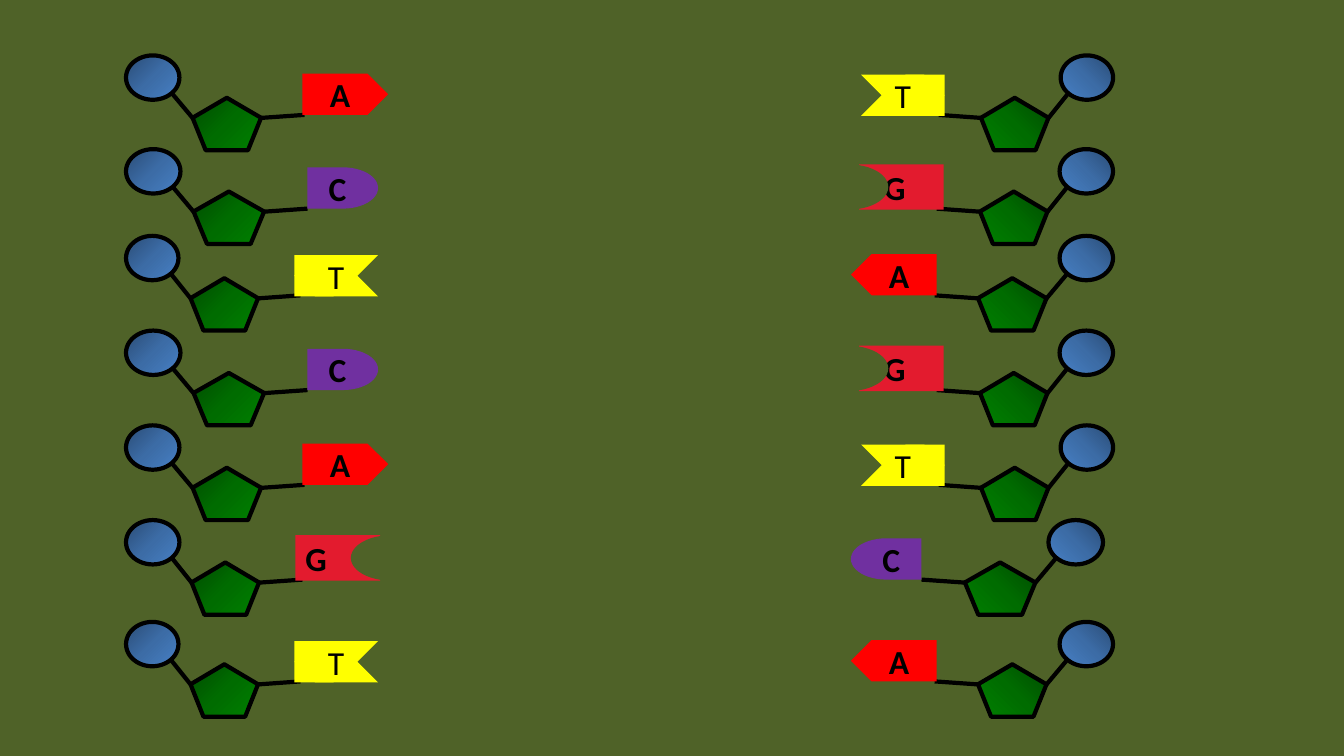
from copy import deepcopy
from dataclasses import dataclass

from lxml.etree import SubElement
from pptx import Presentation
from pptx.dml.color import RGBColor
from pptx.enum.shapes import MSO_CONNECTOR, MSO_SHAPE as Preset
from pptx.enum.text import MSO_ANCHOR, PP_ALIGN
from pptx.oxml.ns import qn
from pptx.util import Inches, Pt

FONT = "Calibri"
BLACK = RGBColor(0x00, 0x00, 0x00)
BACKGROUND = RGBColor(0x4F, 0x62, 0x28)
RED = RGBColor(0xFF, 0x00, 0x00)
YELLOW = RGBColor(0xFF, 0xFF, 0x00)
PURPLE = RGBColor(0x70, 0x30, 0xA0)
CRIMSON = RGBColor(0xE3, 0x1B, 0x2E)
BLUES = (RGBColor(0x2A, 0x4C, 0x75), RGBColor(0x3C, 0x6C, 0xA6), RGBColor(0x47, 0x80, 0xC5))
GREENS = (RGBColor(0x00, 0x4C, 0x00), RGBColor(0x00, 0x6C, 0x00), RGBColor(0x00, 0x80, 0x00))


@dataclass
class Backbone:
    """Widths and distances from the outer edge of a strand, in inches."""
    phosphate_width: float
    sugar_left: float
    sugar_width: float
    bond_end: float


BACKBONES = {
    "A": Backbone(0.53, 0.66, 0.68, 1.77),
    "C": Backbone(0.54, 0.67, 0.70, 1.80),
    "T": Backbone(0.52, 0.64, 0.67, 1.73),
    "G": Backbone(0.53, 0.65, 0.67, 1.75),
}
ROW_TOPS = (0.55, 1.48, 2.34, 3.28, 4.22, 5.16, 6.17)
LEFT_EDGE, RIGHT_EDGE, RIGHT_C_EDGE = 1.25, 11.04, 10.94


class StrandDrawer:
    """Draws one strand; x runs inwards from its outer edge."""

    def __init__(self, slide, mirrored):
        self.shapes = slide.shapes.add_group_shape().shapes
        self.mirrored = mirrored
        self.edge = self.top = 0

    def x(self, distance):
        return Inches(self.edge - distance if self.mirrored else self.edge + distance)

    def shape(self, preset, left, top, width, height, color=None, faces_out=False):
        start = left + width if self.mirrored else left
        shape = self.shapes.add_shape(preset, self.x(start), Inches(self.top + top),
                                      Inches(width), Inches(height))
        shape.shadow.inherit = False
        if self.mirrored != faces_out:
            shape.element.spPr.find(qn("a:xfrm")).set("flipH", "1")
        if color is not None:
            shape.fill.solid()
            shape.fill.fore_color.rgb = color
            shape.line.fill.background()
        return shape

    def shaded_shape(self, preset, left, top, width, height, colors):
        shape = self.shape(preset, left, top, width, height)
        shape.line.color.rgb = BLACK
        shape.line.width = Pt(3)
        shape.fill.gradient()
        shape.fill.gradient_angle = 315
        stop_list = shape.element.spPr.find(qn("a:gradFill")).find(qn("a:gsLst"))
        stop_list.insert(1, deepcopy(stop_list[0]))
        for stop, color, position in zip(shape.fill.gradient_stops, colors, (0, 0.5, 1)):
            stop.color.rgb = color
            stop.position = position

    def bond(self, x1, y1, x2, y2):
        line = self.shapes.add_connector(
            MSO_CONNECTOR.STRAIGHT, self.x(x1), Inches(self.top + y1),
            self.x(x2), Inches(self.top + y2))
        line.line.color.rgb = BLACK
        line.line.width = Pt(3)
        SubElement(line.element.spPr, qn("a:effectLst"))

    def letter(self, shape, text, bold=True, align=PP_ALIGN.CENTER):
        frame = shape.text_frame
        frame.vertical_anchor = MSO_ANCHOR.MIDDLE
        paragraph = frame.paragraphs[0]
        paragraph.text = text
        paragraph.alignment = align
        paragraph.font.name = FONT
        paragraph.font.size = Pt(24)
        paragraph.font.bold = bold
        paragraph.font.color.rgb = BLACK

    def base(self, name):
        if name == "A":
            self.letter(self.shape(Preset.PENTAGON, 1.75, 0.18, 0.85, 0.41, RED), name)
        elif name == "C":
            self.letter(self.shape(Preset.FLOWCHART_DELAY, 1.80, 0.18, 0.70, 0.41, PURPLE), name)
        elif name == "T":
            # The block fills the chevron's point, leaving only its notch
            self.shape(Preset.RECTANGLE, 1.67, 0.19, 0.39, 0.41, YELLOW)
            chevron = self.shape(Preset.CHEVRON, 1.67, 0.19, 0.83, 0.41, YELLOW, faces_out=True)
            self.letter(chevron, name, bold=False)
        else:
            # The block is hollowed by a rounded shape in the background colour
            block = self.shape(Preset.RECTANGLE, 1.68, 0.15, 0.84, 0.45, CRIMSON)
            self.letter(block, name, align=PP_ALIGN.LEFT)
            block.text_frame.margin_left = Inches(0.25 if self.mirrored else 0.1)
            self.shape(Preset.FLOWCHART_DELAY, 2.23, 0.15, 0.79, 0.45, BACKGROUND, faces_out=True)

    def nucleotide(self, name, edge, top):
        self.edge, self.top = edge, top
        part = BACKBONES[name]
        sugar_right = part.sugar_left + part.sugar_width
        self.shaded_shape(Preset.OVAL, 0, 0, part.phosphate_width, 0.44, BLUES)
        self.shaded_shape(Preset.REGULAR_PENTAGON, part.sugar_left, 0.42,
                          part.sugar_width, 0.52, GREENS)
        self.bond(part.sugar_left, 0.62, part.phosphate_width - 0.08, 0.37)
        self.bond(sugar_right, 0.62, part.bond_end, 0.59)
        self.base(name)


def main():
    presentation = Presentation()
    presentation.slide_width = Inches(13.33)
    presentation.slide_height = Inches(7.5)
    slide = presentation.slides.add_slide(presentation.slide_layouts[6])
    slide.background.fill.solid()
    slide.background.fill.fore_color.rgb = BACKGROUND

    # Right strand
    right = StrandDrawer(slide, mirrored=True)
    for name, top in zip("TGAGTCA", ROW_TOPS):
        right.nucleotide(name, RIGHT_C_EDGE if name == "C" else RIGHT_EDGE, top)

    # Left strand
    left = StrandDrawer(slide, mirrored=False)
    for name, top in zip("ACTCAGT", ROW_TOPS):
        left.nucleotide(name, LEFT_EDGE, top)

    presentation.save("out.pptx")


if __name__ == "__main__":
    main()
